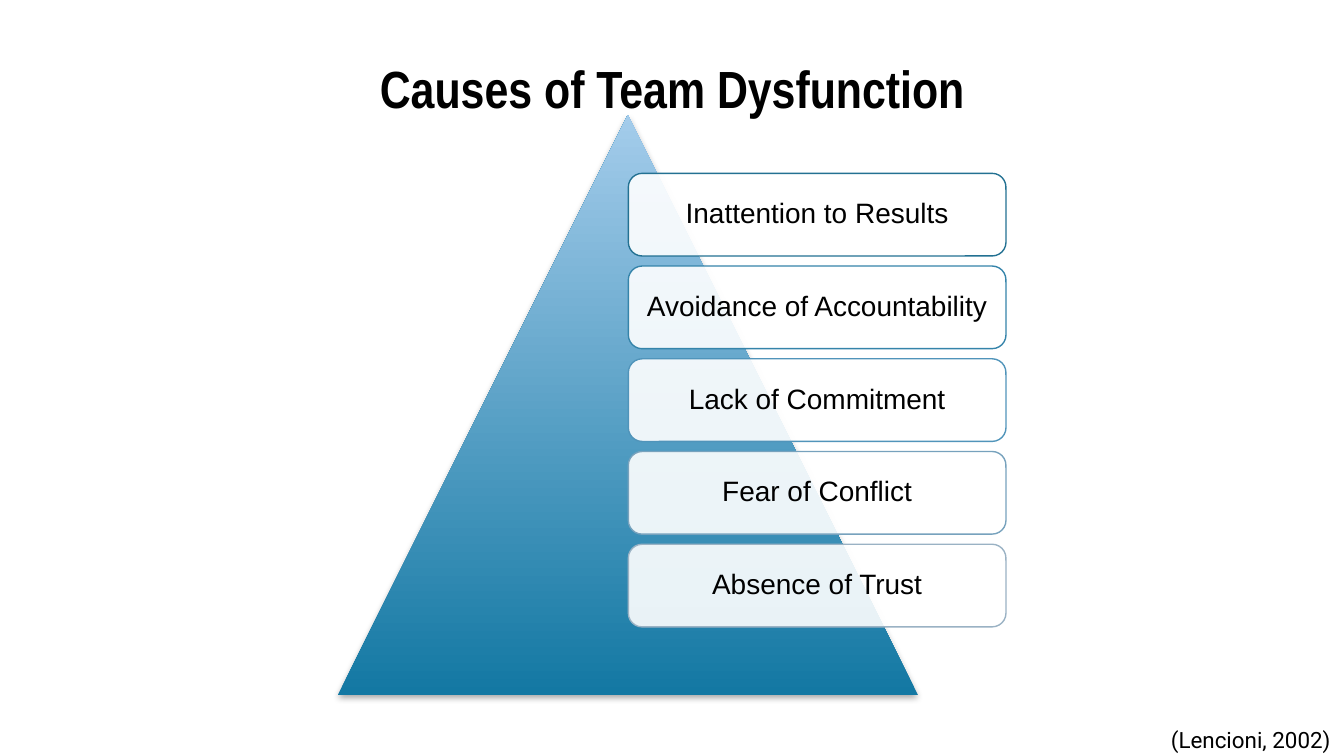
from dataclasses import dataclass

from lxml import etree
from pptx import Presentation
from pptx.dml.color import RGBColor
from pptx.enum.shapes import MSO_SHAPE
from pptx.enum.text import MSO_ANCHOR, MSO_AUTO_SIZE, PP_ALIGN
from pptx.oxml.ns import qn
from pptx.shapes.autoshape import Shape
from pptx.shapes.group import GroupShape
from pptx.text.text import TextFrame
from pptx.util import Emu, Pt

TRIANGLE = MSO_SHAPE.ISOSCELES_TRIANGLE
ROUNDED = MSO_SHAPE.ROUNDED_RECTANGLE
CENTER, RIGHT = PP_ALIGN.CENTER, PP_ALIGN.RIGHT
MIDDLE = MSO_ANCHOR.MIDDLE
NO_AUTOFIT = MSO_AUTO_SIZE.NONE
TITLE_ONLY = 5
EMU_PER_PX = 4572  # 200 px to the inch


@dataclass(frozen=True)
class TextStyle:
    font: str
    size: int
    bold: bool = False


@dataclass(frozen=True)
class Theme:
    text: str = "000000"
    card: str = "FFFFFF"
    card_opacity: int = 90
    pyramid_base: str = "1378A3"
    pyramid_tip: str = "A4CCEB"
    title: TextStyle = TextStyle("Arial Narrow", 28, True)
    label: TextStyle = TextStyle("Arial", 15)
    citation: TextStyle = TextStyle("Roboto", 12)


@dataclass(frozen=True)
class Box:
    left: int
    top: int
    width: int
    height: int

    def emu(self) -> list[Emu]:
        return [px(n) for n in (self.left, self.top, self.width, self.height)]


@dataclass(frozen=True)
class Cause:
    label: str
    outline: str


THEME = Theme()
TITLE = Box(100, 90, 1800, 82)
CITATION = Box(1422, 1077, 578, 48)
PYRAMID = Box(503, 171, 863, 863)
FIRST_CARD = Box(935, 258, 562, 123)
CARD_PITCH = 138
CAUSES = [
    Cause("Inattention to Results", "237192"),
    Cause("Avoidance of Accountability", "3584AA"),
    Cause("Lack of Commitment", "5094BA"),
    Cause("Fear of Conflict", "77A2BD"),
    Cause("Absence of Trust", "9AB2C4"),
]


def px(length: int) -> Emu:
    return Emu(length * EMU_PER_PX)


def rgb(color: str) -> RGBColor:
    return RGBColor.from_string(color)


def write(frame: TextFrame, text: str, style: TextStyle,
          alignment: PP_ALIGN, inset: int) -> None:
    frame.word_wrap = True
    frame.auto_size = NO_AUTOFIT
    frame.vertical_anchor = MIDDLE
    frame.margin_left = frame.margin_right = px(inset)
    frame.margin_top = frame.margin_bottom = px(inset)
    paragraph = frame.paragraphs[0]
    paragraph.alignment = alignment
    run = paragraph.add_run()
    run.text = text
    run.font.name = style.font
    run.font.size = Pt(style.size)
    run.font.bold = style.bold
    run.font.color.rgb = rgb(THEME.text)


def add_soft_shadow(shape: Shape) -> None:
    effects = shape._element.spPr.find(qn("a:effectLst"))
    shadow = etree.SubElement(effects, qn("a:outerShdw"), blurRad="40000",
                              dist="23000", dir="5400000", rotWithShape="0")
    color = etree.SubElement(shadow, qn("a:srgbClr"), val="000000")
    etree.SubElement(color, qn("a:alpha"), val="35000")


def add_pyramid(group: GroupShape, box: Box) -> None:
    pyramid = group.shapes.add_shape(TRIANGLE, *box.emu())
    pyramid.shadow.inherit = False
    add_soft_shadow(pyramid)
    pyramid.line.fill.background()
    pyramid.fill.gradient()
    pyramid.fill.gradient_angle = 90
    colors = (THEME.pyramid_base, THEME.pyramid_tip)
    for stop, color in zip(pyramid.fill.gradient_stops, colors):
        stop.color.rgb = rgb(color)


def add_card(group: GroupShape, box: Box, cause: Cause) -> None:
    card = group.shapes.add_shape(ROUNDED, *box.emu())
    card.shadow.inherit = False
    card.fill.solid()
    card.fill.fore_color.rgb = rgb(THEME.card)
    color = card._element.spPr.find(qn("a:solidFill")).find(qn("a:srgbClr"))
    etree.SubElement(color, qn("a:alpha"), val=str(THEME.card_opacity * 1000))
    card.line.color.rgb = rgb(cause.outline)
    card.line.width = Pt(0.75)
    write(card.text_frame, cause.label, THEME.label, CENTER, 12)
    card.text_frame.paragraphs[0].line_spacing = 0.9


def main() -> None:
    presentation = Presentation()
    presentation.slide_width, presentation.slide_height = px(2000), px(1125)
    slide = presentation.slides.add_slide(
        presentation.slide_layouts[TITLE_ONLY])

    # Title
    title = slide.shapes.title
    title.left, title.top, title.width, title.height = TITLE.emu()
    write(title.text_frame, "Causes of Team Dysfunction", THEME.title, CENTER, 20)

    # Citation
    citation = slide.shapes.add_textbox(*CITATION.emu())
    write(citation.text_frame, "(Lencioni, 2002)", THEME.citation, RIGHT, 20)

    # Pyramid with its stack of causes
    diagram = slide.shapes.add_group_shape()
    add_pyramid(diagram, PYRAMID)
    for index, cause in enumerate(CAUSES):
        top = FIRST_CARD.top + index * CARD_PITCH
        box = Box(FIRST_CARD.left, top, FIRST_CARD.width, FIRST_CARD.height)
        add_card(diagram, box, cause)

    presentation.save("out.pptx")


if __name__ == "__main__":
    main()
